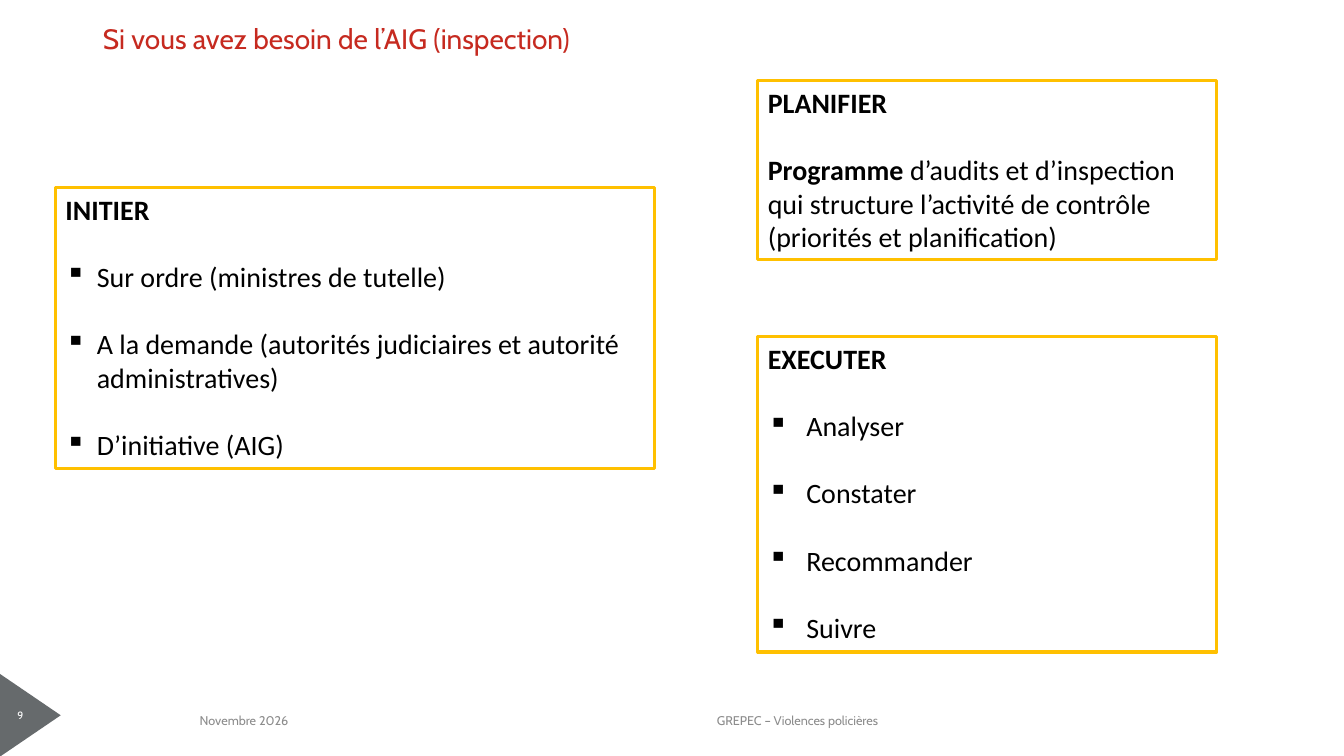
from dataclasses import dataclass

from lxml import etree
from pptx import Presentation
from pptx.dml.color import RGBColor
from pptx.enum.shapes import MSO_SHAPE
from pptx.enum.text import MSO_ANCHOR, MSO_AUTO_SIZE, PP_ALIGN
from pptx.oxml.ns import qn
from pptx.util import Cm, Pt

RECT, WEDGE = MSO_SHAPE.RECTANGLE, MSO_SHAPE.ISOSCELES_TRIANGLE
TOP, MIDDLE = MSO_ANCHOR.TOP, MSO_ANCHOR.MIDDLE
LEFT, CENTER = PP_ALIGN.LEFT, PP_ALIGN.CENTER
FIXED, GROW = MSO_AUTO_SIZE.NONE, MSO_AUTO_SIZE.SHAPE_TO_FIT_TEXT


@dataclass(frozen=True)
class Theme:
    head: str = "Cabin"
    body: str = "Calibri"
    red: str = "C62A20"
    gold: str = "FFC000"
    slate: str = "666A6C"
    gray: str = "8C8C8C"
    black: str = "000000"
    white: str = "FFFFFF"
    large: float = 20
    small: float = 9
    tiny: float = 7.5
    gap: float = 24
    edge: float = 2.25


THEME = Theme()


def color(code):
    return RGBColor.from_string(code)


def add_run(para, text, face, size, code, bold=False):
    run = para.add_run()
    run.text = text
    font = run.font
    font.name, font.size, font.bold = face, Pt(size), bold
    font.color.rgb = color(code)


def add_bullet(para, indent):
    props = para._p.get_or_add_pPr()
    props.set("marL", str(Cm(indent)))
    props.set("indent", str(-Cm(indent)))
    etree.SubElement(props, qn("a:buChar")).set("char", "▪")


def add_label(slide, area, text, size, code):
    """Centred single line of text."""
    label = slide.shapes.add_textbox(*map(Cm, area))
    frame = label.text_frame
    frame.word_wrap = True
    frame.vertical_anchor = MIDDLE
    para = frame.paragraphs[0]
    para.alignment = CENTER
    add_run(para, text, THEME.head, size, code)
    return frame


def add_card(slide, area, head, items, indent=0):
    """Gold outline with a bold heading; each item is a list of (text, bold)."""
    card = slide.shapes.add_shape(RECT, *map(Cm, area))
    card.shadow.inherit = False
    card.fill.background()
    card.line.color.rgb = color(THEME.gold)
    card.line.width = Pt(THEME.edge)
    frame = card.text_frame
    frame.word_wrap = True
    frame.auto_size = GROW
    frame.vertical_anchor = TOP
    for i, parts in enumerate([[(head, True)], *items]):
        para = frame.add_paragraph() if i else frame.paragraphs[0]
        para.alignment = LEFT
        if i:
            para.space_before = Pt(THEME.gap)
            if indent:
                add_bullet(para, indent)
        for text, bold in parts:
            add_run(para, text, THEME.body, THEME.large, THEME.black, bold)


def set_title(slide, area, text):
    title = slide.shapes.title
    title.left, title.top, title.width, title.height = map(Cm, area)
    frame = title.text_frame
    frame.auto_size = FIXED
    frame.vertical_anchor = MIDDLE
    para = frame.paragraphs[0]
    para.alignment = LEFT
    para.line_spacing = 0.9
    add_run(para, text, THEME.head, THEME.large, THEME.red)


def add_page(slide, number):
    """Page number on a wedge at the left edge."""
    wedge = slide.shapes.add_shape(WEDGE, Cm(-0.3), Cm(17.25), Cm(2.11), Cm(1.55))
    wedge.rotation = 90
    wedge.shadow.inherit = False
    wedge.fill.solid()
    wedge.fill.fore_color.rgb = color(THEME.slate)
    wedge.line.fill.background()
    frame = add_label(slide, (-0.03, 17.5, 1.09, 1.07), number, THEME.tiny, THEME.white)
    frame.margin_left = frame.margin_right = Cm(0.18)
    frame.margin_top = frame.margin_bottom = Cm(0.1)


def plain(*lines):
    return [[(line, False)] for line in lines]


def main():
    deck = Presentation()
    deck.slide_width, deck.slide_height = Cm(33.87), Cm(19.05)
    slide = deck.slides.add_slide(deck.slide_layouts[5])

    # Title and footer
    add_page(slide, "9")
    set_title(slide, (2.34, 0.38, 28.35, 1.27), "Si vous avez besoin de l’AIG (inspection)")
    for left, width, text in (
        (2.34, 7.62, "Novembre 2026"),
        (11.23, 17.73, "GREPEC – Violences policières"),
    ):
        add_label(slide, (left, 17.65, width, 1.02), text, THEME.small, THEME.gray)

    # Three steps
    add_card(slide, (1.4, 4.72, 15.09, 7.09), "INITIER", plain(
        "Sur ordre (ministres de tutelle)",
        "A la demande (autorités judiciaires et autorité administratives)",
        "D’initiative (AIG)",
    ), 0.79)
    add_card(slide, (19.1, 2.03, 11.56, 4.52), "PLANIFIER", [[
        ("Programme", True),
        (" d’audits et d’inspection qui structure l’activité de contrôle "
         "(priorités et planification)", False),
    ]])
    add_card(slide, (19.1, 8.48, 11.56, 7.95), "EXECUTER", plain(
        "Analyser", "Constater", "Recommander", "Suivre",
    ), 0.97)

    deck.save("out.pptx")


if __name__ == "__main__":
    main()
